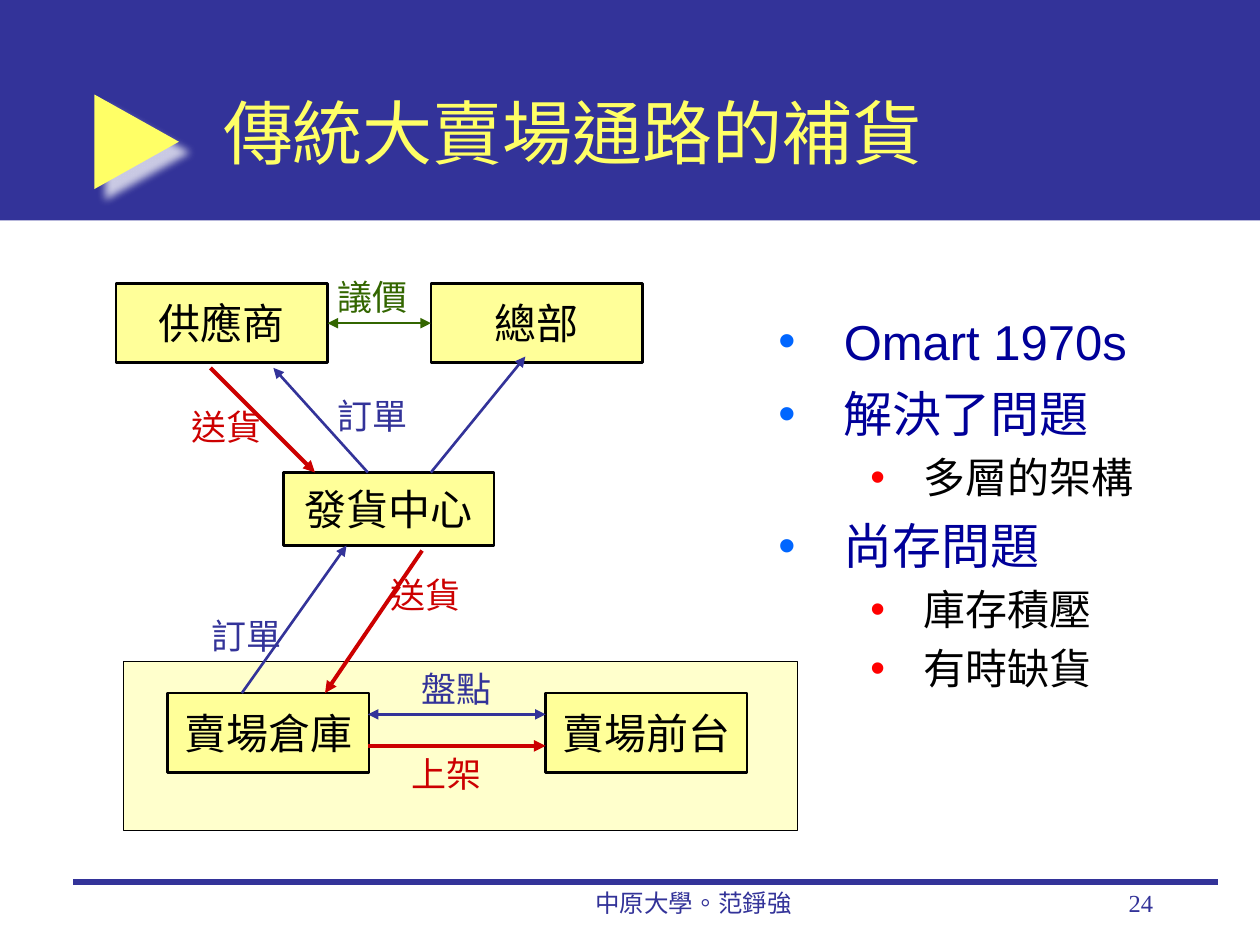
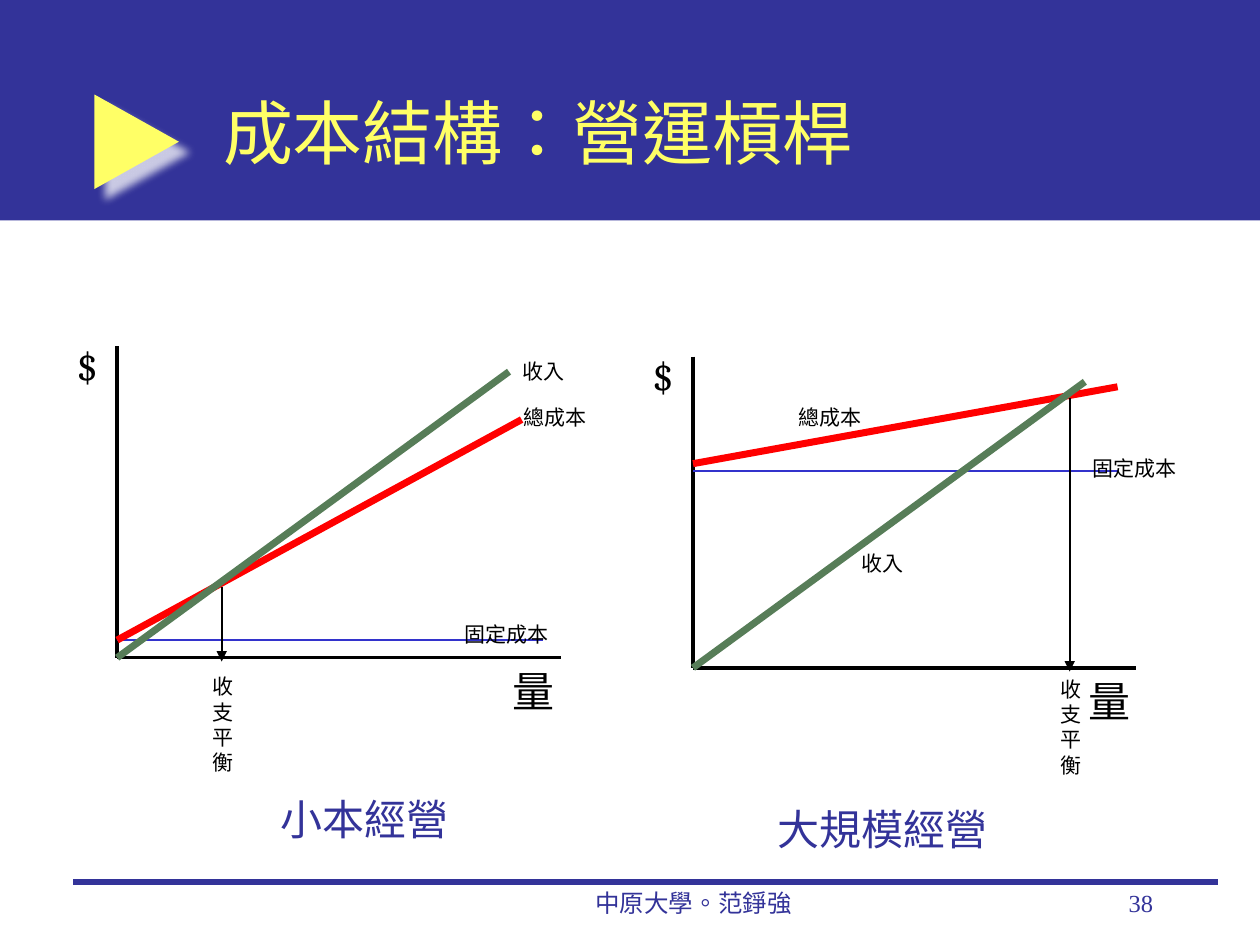
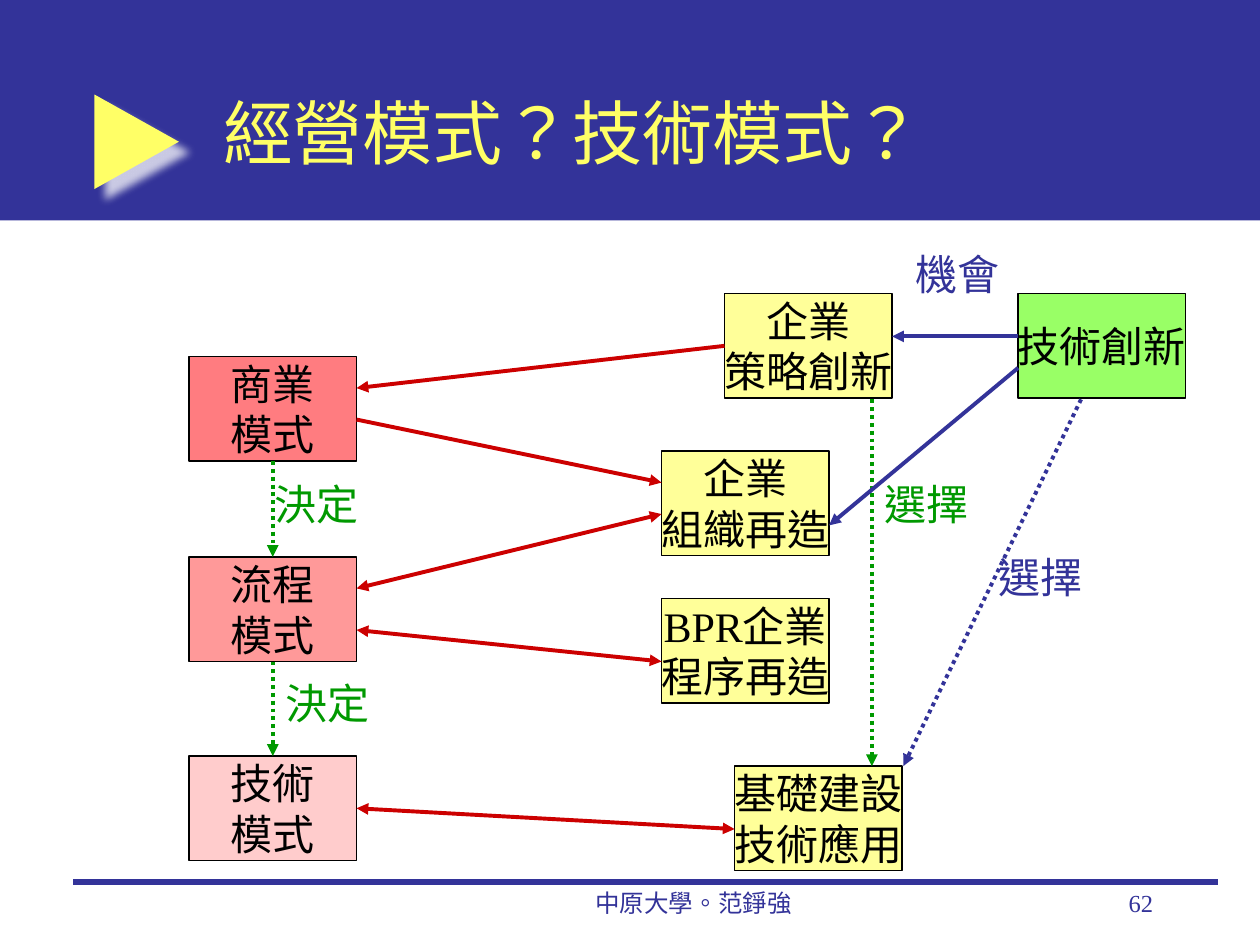
from lxml.etree import SubElement
from pptx import Presentation
from pptx.dml.color import RGBColor
from pptx.enum.dml import MSO_LINE
from pptx.enum.shapes import MSO_CONNECTOR, MSO_SHAPE
from pptx.enum.text import MSO_ANCHOR, MSO_AUTO_SIZE, PP_ALIGN
from pptx.oxml import parse_xml
from pptx.oxml.ns import nsdecls, qn
from pptx.util import Inches, Pt

NAVY = RGBColor(0x33, 0x33, 0x99)
SUN = RGBColor(0xFF, 0xFF, 0x66)
BLACK = RGBColor(0, 0, 0)
CREAM = RGBColor(0xFF, 0xFF, 0xCC)
YELLOW = RGBColor(0xFF, 0xFF, 0x99)
CRIMSON = RGBColor(0xCC, 0, 0)
OLIVE = RGBColor(0x33, 0x66, 0)
GREEN = RGBColor(0, 0x99, 0)
LIME = RGBColor(0x99, 0xFF, 0x66)
CORAL = RGBColor(0xFF, 0x7C, 0x80)
SALMON = RGBColor(0xFF, 0x99, 0x99)
PINK = RGBColor(0xFF, 0xCC, 0xCC)
DEEP_BLUE = RGBColor(0, 0, 0x99)
BULLET_BLUE = RGBColor(0, 0x66, 0xFF)
RED = RGBColor(0xFF, 0, 0)
FIXED_BLUE = RGBColor(0x33, 0x33, 0xCC)
SAGE = RGBColor(0x57, 0x7D, 0x58)
SERIF = "Times New Roman"
SANS = "Arial"


def write(shape, text, size=24, color=BLACK, font=SERIF, align=PP_ALIGN.LEFT,
          anchor=MSO_ANCHOR.TOP, wrap=False, fill=None, border=0.75,
          bullet=None, margin=0, hanging=0, before=0):
    """Append text to a shape, one paragraph a line; fill makes it a bordered box."""
    frame = shape.text_frame
    frame.word_wrap = wrap
    frame.vertical_anchor = anchor
    if fill is not None:
        shape.shadow.inherit = False
        shape.fill.solid()
        shape.fill.fore_color.rgb = fill
        shape.line.color.rgb = BLACK
        shape.line.width = Pt(border)
    elif not wrap:
        frame.auto_size = MSO_AUTO_SIZE.SHAPE_TO_FIT_TEXT
    for line in text.split("\n"):
        paragraph = frame.add_paragraph() if frame.text else frame.paragraphs[0]
        paragraph.alignment = align
        if bullet is not None:
            props = paragraph._p.get_or_add_pPr()
            props.set("marL", str(Inches(margin)))
            props.set("indent", str(-Inches(hanging)))
            tint = SubElement(props, qn("a:buClr"))
            SubElement(tint, qn("a:srgbClr"), val=str(bullet))
            SubElement(props, qn("a:buFont"), typeface=SANS)
            SubElement(props, qn("a:buChar"), char="•")
        if before:
            paragraph.space_before = Pt(before)
        run = paragraph.add_run()
        run.text = line
        run.font.size = Pt(size)
        run.font.name = font
        run.font.color.rgb = color
        run._r.get_or_add_rPr().set("lang", "zh-TW")
    return shape


def draw_line(slide, start, end, color, width, arrows="", dash=None,
              begin_at=None, end_at=None):
    """Draw a line; arrows is '', '>' or '<>', begin_at and end_at are (box, side)."""
    line = slide.shapes.add_connector(
        MSO_CONNECTOR.STRAIGHT, *map(Inches, (*start, *end)))
    if begin_at:
        line.begin_connect(*begin_at)
    if end_at:
        line.end_connect(*end_at)
    line.line.color.rgb = color
    line.line.width = Pt(width)
    if dash:
        line.line.dash_style = dash
    outline = line.line._get_or_add_ln()
    if "<" in arrows:
        SubElement(outline, qn("a:headEnd"), type="triangle")
    if ">" in arrows:
        SubElement(outline, qn("a:tailEnd"), type="triangle")
    SubElement(line._element.spPr, qn("a:effectLst"))
    return line


prs = Presentation()
prs.slide_width, prs.slide_height = Inches(10), Inches(7.5)
layout = prs.slide_layouts[5]

# Titles and page numbers
slides = []
for heading, page in (("傳統大賣場通路的補貨", "24"),
                      ("成本結構：營運槓桿", "38"),
                      ("經營模式？技術模式？", "62")):
    slide = prs.slides.add_slide(layout)
    title = slide.shapes.title
    title.left, title.top, title.width, title.height = map(
        Inches, (1.67, 0.42, 7.58, 1.25))
    write(title, heading, size=40, color=SUN, font="Noto Sans CJK SC",
          anchor=MSO_ANCHOR.MIDDLE, wrap=True)
    write(slide.shapes.add_textbox(*map(Inches, (7.17, 7, 2.08, 0.5))), page,
          size=14, color=NAVY, align=PP_ALIGN.RIGHT, wrap=True)
    slides.append(slide)
replenishment, leverage, models = slides

# Shared band, marker, rule and footer, drawn once and moved to the layout
shapes = replenishment.shapes
band = shapes.add_shape(MSO_SHAPE.RECTANGLE, 0, 0, prs.slide_width, Inches(1.75))
marker = shapes.add_shape(
    MSO_SHAPE.RIGHT_ARROW, *map(Inches, (0.75, 0.75, 0.67, 0.75)))
marker.adjustments[0], marker.adjustments[1] = 0.38, 1
for part, color in ((band, NAVY), (marker, SUN)):
    part.shadow.inherit = False
    part.fill.solid()
    part.fill.fore_color.rgb = color
    part.line.fill.background()
marker._element.spPr.find(qn("a:effectLst")).append(parse_xml(
    f'<a:outerShdw {nsdecls("a")} blurRad="{Pt(5)}" dist="{Pt(8.5)}" dir="2700000"'
    ' algn="ctr" rotWithShape="0"><a:srgbClr val="FFFFFF"><a:alpha val="75000"/>'
    '</a:srgbClr></a:outerShdw>'))
rule = draw_line(replenishment, (0.58, 7), (9.67, 7), NAVY, 3)
footer = write(shapes.add_textbox(*map(Inches, (3.92, 7, 3.17, 0.5))),
               "中原大學。范錚強", size=14, color=NAVY, align=PP_ALIGN.CENTER, wrap=True)
for part in (band, marker, rule, footer):
    layout.shapes._spTree.append(part._element)

# Slide 1: replenishment flow
store = shapes.add_shape(MSO_SHAPE.RECTANGLE, *map(Inches, (0.98, 5.25, 5.35, 1.34)))
write(store, "", fill=CREAM)
sites = {}
for name, *at in (("供應商", 0.92, 2.25, 1.68, 0.63),
                  ("總部", 3.42, 2.25, 1.68, 0.63),
                  ("發貨中心", 2.25, 3.75, 1.67, 0.58),
                  ("賣場倉庫", 1.33, 5.5, 1.6, 0.63),
                  ("賣場前台", 4.33, 5.5, 1.6, 0.63)):
    sites[name] = write(
        shapes.add_shape(MSO_SHAPE.RECTANGLE, *map(Inches, at)), name, fill=YELLOW,
        border=1.5, align=PP_ALIGN.CENTER, anchor=MSO_ANCHOR.MIDDLE)

draw_line(replenishment, (3.42, 2.57), (2.6, 2.57), OLIVE, 1.5, "<>",
          begin_at=(sites["總部"], 1), end_at=(sites["供應商"], 3))
for start, end in (((3.35, 4.37), (2.58, 5.5)),
                   ((1.67, 2.92), (2.5, 3.75)),
                   ((2.92, 5.92), (4.33, 5.92))):
    draw_line(replenishment, start, end, CRIMSON, 2.25, ">")
for start, end, arrows in (((1.92, 5.5), (2.75, 4.33), ">"),
                           ((4.33, 5.67), (2.92, 5.67), "<>"),
                           ((2.92, 3.75), (2.17, 2.92), ">"),
                           ((3.42, 3.75), (4.17, 2.83), ">")):
    draw_line(replenishment, start, end, NAVY, 1.5, arrows)

for flow, left, top, color in (("議價", 2.58, 2.14, OLIVE),
                               ("送貨", 1.42, 3.17, CRIMSON),
                               ("訂單", 2.58, 3.08, NAVY),
                               ("送貨", 3, 4.5, CRIMSON),
                               ("訂單", 1.58, 4.83, NAVY),
                               ("盤點", 3.25, 5.25, NAVY),
                               ("上架", 3.17, 5.92, CRIMSON)):
    write(shapes.add_textbox(*map(Inches, (left, top, 0.76, 0.43))), flow,
          size=20, color=color)

TOPIC = dict(size=28, color=DEEP_BLUE, font=SANS, bullet=BULLET_BLUE,
             margin=0.52, hanging=0.52, wrap=True)
DETAIL = dict(bullet=RED, margin=1.15, hanging=0.42, before=5, wrap=True)
remarks = shapes.add_textbox(*map(Inches, (6.08, 2.42, 3.33, 3.08)))
write(remarks, "Omart 1970s", **TOPIC)
write(remarks, "解決了問題", before=8, **TOPIC)
write(remarks, "多層的架構", **DETAIL)
write(remarks, "尚存問題", before=8, **TOPIC)
write(remarks, "庫存積壓\n有時缺貨", **DETAIL)

# Slide 2: break-even diagrams, laid out from each origin
diagrams = (
    dict(origin=(0.93, 5.22), fixed=5.08, cost=((0.93, 5.08), (4.14, 3.33)),
         even=(1.76, 4.66), even_label=(1.59, 5.3), caption=("小本經營", 2.13, 1.53),
         labels=(("固定成本", 3.59, 4.88, 0.92), ("總成本", 4.06, 3.16, 0.72),
                 ("收入", 4.05, 2.8, 0.55))),
    dict(origin=(5.5, 5.3), fixed=3.74, cost=((5.5, 3.68), (8.87, 3.07)),
         even=(8.49, 3.16), even_label=(8.32, 5.32), caption=("大規模經營", 6.07, 1.87),
         labels=(("固定成本", 8.57, 3.57, 0.92), ("總成本", 6.24, 3.16, 0.72),
                 ("收入", 6.74, 4.32, 0.55))),
)
shapes = leverage.shapes
for diagram in diagrams:
    x, y = diagram["origin"]
    even_x, even_y = diagram["even"]
    fixed = diagram["fixed"]
    draw_line(leverage, (x, y - 2.47), (x, y), BLACK, 2)
    draw_line(leverage, (x, y), (x + 3.52, y), BLACK, 2)
    draw_line(leverage, (x, fixed), (x + 3.38, fixed), FIXED_BLUE, 1)
    draw_line(leverage, *diagram["cost"], RED, 4)
    draw_line(leverage, (x, y), (x + 3.11, y - 2.27), SAGE, 4)
    draw_line(leverage, (even_x, even_y), (even_x, y + 0.03), BLACK, 1, ">")
    write(shapes.add_textbox(*map(Inches, (x + 3.04, y + 0.01, 0.53, 0.5))), "量",
          font=SANS)
    write(shapes.add_textbox(*map(Inches, (x - 0.42, y - 2.57, 0.36, 0.5))), "$",
          font="Cambria")
    for label, left, top, width in diagram["labels"]:
        write(shapes.add_textbox(*map(Inches, (left, top, width, 0.3))), label,
              size=12, font=SANS)
    write(shapes.add_textbox(*map(Inches, (*diagram["even_label"], 0.4, 0.9))),
          "收支平衡", size=12, font=SANS, wrap=True)
    caption, left, width = diagram["caption"]
    write(shapes.add_textbox(*map(Inches, (left, y + 1.03, width, 0.5))), caption,
          color=NAVY)

# Slide 3: business and technology models
shapes = models.shapes
boxes = {}
for name, left, top, fill in (("商業\n模式", 1.5, 2.83, CORAL),
                              ("流程\n模式", 1.5, 4.42, SALMON),
                              ("技術\n模式", 1.5, 6, PINK),
                              ("企業\n策略創新", 5.75, 2.33, YELLOW),
                              ("企業\n組織再造", 5.25, 3.58, YELLOW),
                              ("BPR企業\n程序再造", 5.25, 4.75, YELLOW),
                              ("基礎建設\n技術應用", 5.83, 6.08, YELLOW),
                              ("技術創新", 8.08, 2.33, LIME)):
    boxes[name] = write(
        shapes.add_shape(MSO_SHAPE.RECTANGLE, *map(Inches, (left, top, 1.33, 0.83))),
        name, fill=fill, align=PP_ALIGN.CENTER, anchor=MSO_ANCHOR.MIDDLE)
business, process, technology, strategy = list(boxes.values())[:4]

DOT = MSO_LINE.ROUND_DOT
for start, end, color, arrows, dash, begin_at, end_at in (
        ((5.75, 2.75), (2.83, 3.08), CRIMSON, ">", None, (strategy, 1), None),
        ((2.83, 3.33), (5.25, 3.83), CRIMSON, ">", None, None, None),
        ((5.25, 4.08), (2.83, 4.67), CRIMSON, "<>", None, None, None),
        ((5.25, 5.25), (2.83, 5), CRIMSON, "<>", None, None, None),
        ((5.83, 6.58), (2.83, 6.42), CRIMSON, "<>", None, None, (technology, 3)),
        ((2.17, 3.67), (2.17, 4.42), GREEN, ">", DOT, (business, 2), (process, 0)),
        ((2.17, 5.25), (2.17, 6), GREEN, ">", DOT, (process, 2), (technology, 0)),
        ((6.92, 3.17), (6.92, 6.08), GREEN, ">", DOT, None, None),
        ((8.08, 2.67), (7.08, 2.67), NAVY, ">", None, None, None),
        ((8.08, 2.92), (6.58, 4.17), NAVY, ">", None, None, None),
        ((8.58, 3.17), (7.17, 6.08), NAVY, ">", DOT, None, None)):
    draw_line(models, start, end, color, 2.25, arrows, dash, begin_at, end_at)

for relation, left, top, color in (("決定", 2.08, 3.75, GREEN),
                                   ("決定", 2.17, 5.33, GREEN),
                                   ("選擇", 6.92, 3.75, GREEN),
                                   ("機會", 7.17, 1.92, NAVY),
                                   ("選擇", 7.83, 4.33, NAVY)):
    write(shapes.add_textbox(*map(Inches, (left, top, 0.87, 0.5))), relation,
          color=color)

prs.save("out.pptx")
